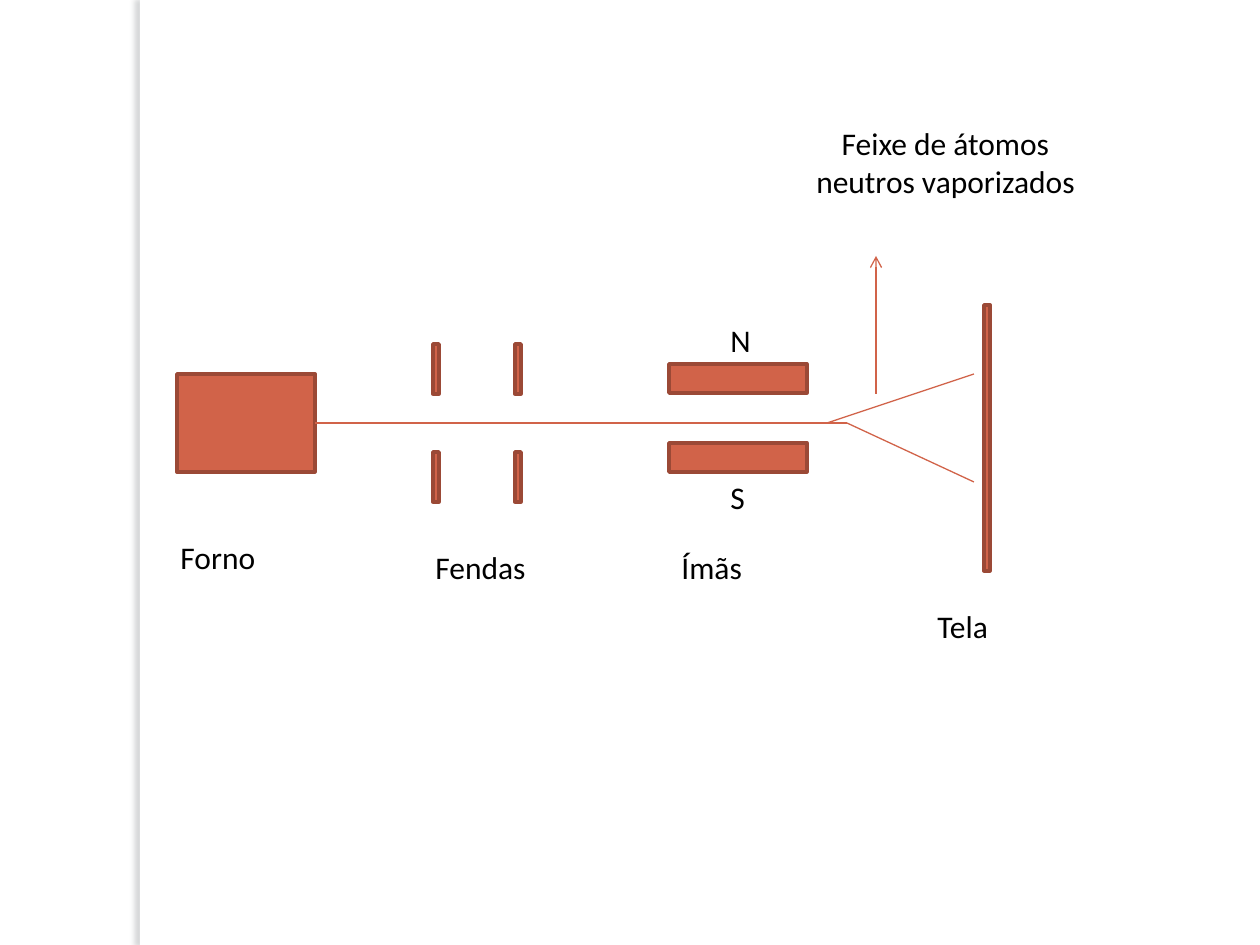
from dataclasses import dataclass

from lxml import etree
from pptx import Presentation
from pptx import util as u
from pptx.dml.color import RGBColor
from pptx.enum import shapes as sh, text as tx
from pptx.oxml import parse_xml
from pptx.oxml.ns import nsdecls, qn

PX = 914400 / 126  # one px in EMU


@dataclass(frozen=True)
class Theme:
    paper: str = "FFFFFF"
    rust: str = "D16349"
    edge: str = "9B4936"
    ink: str = "000000"
    shade: str = "61686B"
    font: str = "Calibri"
    size: int = 18
    rim: float = 2
    ray: float = 0.75


T = Theme()


def emu(*vals):
    return [u.Emu(round(v * PX)) for v in vals]


def rgb(code):
    return RGBColor.from_string(code)


def style(item, form):
    for name, val in form.items():
        setattr(item, name, val)


# Basic pieces
def block(slide, x, y, w, h, fill=T.rust, edge=T.edge):
    shape = slide.shapes.add_shape(sh.MSO_SHAPE.RECTANGLE, *emu(x, y, w, h))
    shape.shadow.inherit = False
    shape.fill.solid()
    shape.fill.fore_color.rgb = rgb(fill)
    if edge:
        shape.line.color.rgb = rgb(edge)
        shape.line.width = u.Pt(T.rim)
    else:
        shape.line.fill.background()
    return shape


def ray(slide, x1, y1, x2, y2, arrow=False):
    line = slide.shapes.add_connector(
        sh.MSO_CONNECTOR.STRAIGHT, *emu(x1, y1, x2, y2))
    line.line.color.rgb = rgb(T.rust)
    line.line.width = u.Pt(T.ray)
    props = line._element.spPr
    if arrow:
        etree.SubElement(props.find(qn("a:ln")), qn("a:tailEnd"),
                         type="arrow")
    etree.SubElement(props, qn("a:effectLst"))


def label(slide, words, x, y, w, h=50, wrap=True, align=tx.PP_ALIGN.LEFT):
    frame = slide.shapes.add_textbox(*emu(x, y, w, h)).text_frame
    style(frame, {"word_wrap": wrap,
                  "auto_size": tx.MSO_AUTO_SIZE.SHAPE_TO_FIT_TEXT})
    para = frame.paragraphs[0]
    para.alignment = align
    run = para.add_run()
    run.text = words
    style(run.font, {"name": T.font, "size": u.Pt(T.size)})
    run.font.color.rgb = rgb(T.ink)


# Side strip with a soft shadow to its left
def strip(slide, x, y, w, h):
    bar = block(slide, x, y, w, h, T.paper, None)
    props = bar._element.spPr
    props.remove(props.find(qn("a:effectLst")))
    props.append(parse_xml(
        f'<a:effectLst {nsdecls("a")}><a:outerShdw blurRad="{u.Pt(3)}" '
        f'dist="{u.Pt(3)}" dir="10800000" algn="tl" rotWithShape="0">'
        f'<a:srgbClr val="{T.shade}"><a:alpha val="25000"/></a:srgbClr>'
        '</a:outerShdw></a:effectLst>'))


# Oven that gives off the atoms
def oven(slide, x, y, w, h):
    block(slide, x, y, w, h)
    label(slide, "Forno", x - 9, y + 158, 158)


# Two pairs of plates, one at each corner of the box
def slits(slide, x, y, w, h):
    wide, tall = 6, 50
    for top in (y, y + h - tall):
        for left in (x, x + w - wide):
            block(slide, left, top, wide, tall)
    label(slide, "Fendas", x - 10, y + 198, 158)


# Poles above and below the beam
def magnets(slide, x, y, w, h):
    tall = 29
    for top in (y, y + h - tall):
        block(slide, x, top, w, tall)
    label(slide, "Ímãs", x, y + 178, 158)
    label(slide, "N", x + 49, y - 49, 49)
    label(slide, "S", x + 49, y + h, 40, wrap=False)


# Screen that the atoms hit
def screen(slide, x, y, w, h):
    block(slide, x, y, w, h)
    label(slide, "Tela", x - 59, y + 296, 118)


# Beam that splits in two, with its caption
def beam(slide, x, y, w, h):
    end, mid = x + w, y + 49
    fork = end - 127
    ray(slide, x, mid, fork, mid)
    ray(slide, fork, mid, end, y + h)
    ray(slide, fork - 20, mid, end, y)
    ray(slide, end - 98, y + 20, end - 98, y - 118, arrow=True)
    label(slide, "Feixe de átomos neutros vaporizados",
          end - 176, y - 256, 295, 89, align=tx.PP_ALIGN.CENTER)


def main():
    deck = Presentation()
    deck.slide_width, deck.slide_height = emu(1260, 945)
    slide = deck.slides.add_slide(deck.slide_layouts[6])
    strip(slide, 140, 0, 10, 945)
    oven(slide, 177, 374, 138, 98)
    slits(slide, 433, 344, 88, 158)
    magnets(slide, 669, 364, 138, 108)
    screen(slide, 984, 305, 6, 266)
    beam(slide, 315, 374, 659, 108)
    deck.save("out.pptx")


if __name__ == "__main__":
    main()
